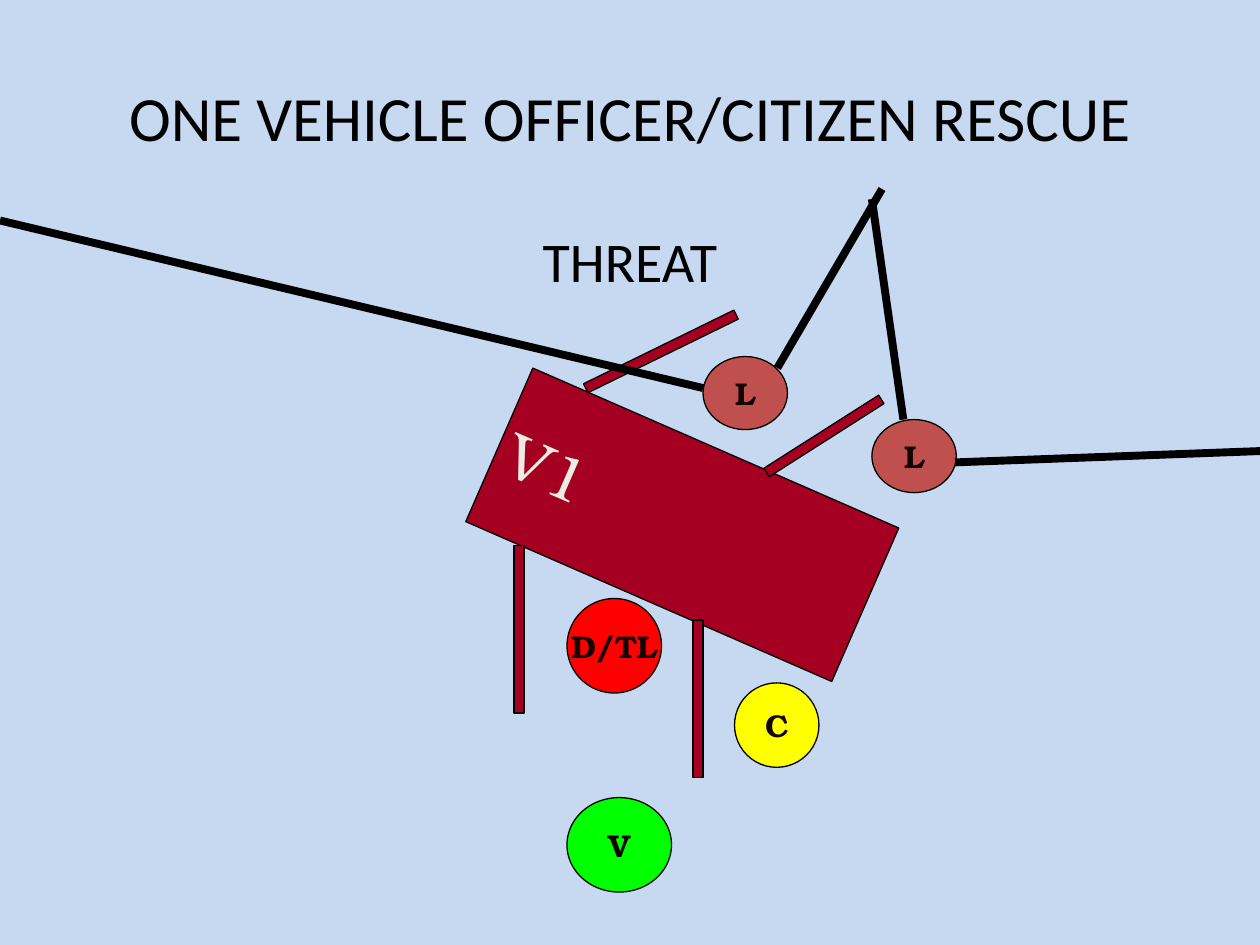
from dataclasses import dataclass

import lxml.etree
import pptx
import pptx.dml.color
import pptx.enum.shapes
import pptx.enum.text
import pptx.oxml.ns
import pptx.util
from pptx.util import Inches

SHAPE = pptx.enum.shapes.MSO_SHAPE
ANCHOR = pptx.enum.text.MSO_ANCHOR
ALIGN = pptx.enum.text.PP_ALIGN


@dataclass(frozen=True)
class Theme:
    background: str = "C6D9F1"
    ink: str = "000000"
    vehicle: str = "A50021"
    vehicle_text: str = "EEECE1"
    role_text: str = "140400"
    lead: str = "C0504D"
    driver: str = "FF0000"
    cover: str = "FFFF00"
    victim: str = "00FF00"
    body_font: str = "Calibri"
    label_font: str = "TeX Gyre Bonum"
    title_size: int = 36
    threat_size: int = 32
    role_size: int = 18
    outline: float = 0.75
    sight_line: float = 4.5


THEME = Theme()


def rgb(value):
    return pptx.dml.color.RGBColor.from_string(value)


def write(tf, text, *, size, color=THEME.ink, font=THEME.body_font, bold=False,
          anchor=ANCHOR.MIDDLE, wrap=True):
    tf.word_wrap = wrap
    tf.vertical_anchor = anchor
    p = tf.paragraphs[0]
    p.alignment = ALIGN.CENTER
    r = p.add_run()
    r.text = text
    r.font.name = font
    r.font.size = pptx.util.Pt(size)
    r.font.bold = bold
    r.font.color.rgb = rgb(color)


def place(sp, box):
    sp.left, sp.top, sp.width, sp.height = box


def within(box, x, y, w, h):
    return box[0] + Inches(x), box[1] + Inches(y), Inches(w), Inches(h)


def add_solid(s, kind, box, fill, rotation=0):
    sp = s.shapes.add_shape(kind, *box)
    sp.shadow.inherit = False
    sp.rotation = rotation
    sp.fill.solid()
    sp.fill.fore_color.rgb = rgb(fill)
    sp.line.color.rgb = rgb(THEME.ink)
    sp.line.width = pptx.util.Pt(THEME.outline)
    return sp


def add_title(s, box):
    sp = s.shapes.title
    place(sp, box)
    write(sp.text_frame, "ONE VEHICLE OFFICER/CITIZEN RESCUE", size=THEME.title_size)


def add_threat(s, box):
    sp = s.shapes.add_textbox(*box)
    write(sp.text_frame, "THREAT", size=THEME.threat_size, anchor=ANCHOR.TOP)


def add_vehicle(s, box):
    body = add_solid(s, SHAPE.RECTANGLE, within(box, 0.67, 0, 1.33, 3.17),
                     THEME.vehicle, 293.6)
    write(body.text_frame, "V1", size=THEME.title_size, color=THEME.vehicle_text,
          font=THEME.label_font, wrap=False)
    body.element.find(".//" + pptx.oxml.ns.qn("a:bodyPr")).set("vert", "eaVert")
    doors = [
        (0.5, 0.17, 1.33, 0.08, 333.9),
        (0, 1.75, 0.08, 1.33, 0),
        (1.92, 0.84, 1.08, 0.08, 327.5),
        (1.42, 2.34, 0.08, 1.25, 0),
    ]
    for x, y, w, h, rotation in doors:
        add_solid(s, SHAPE.RECTANGLE, within(box, x, y, w, h), THEME.vehicle, rotation)


def add_team(s, box):
    roles = [
        ("L", 1.08, 0, 0.67, 0.58, THEME.lead),
        ("L", 2.42, 0.5, 0.67, 0.58, THEME.lead),
        ("D/TL", 0, 1.92, 0.75, 0.75, THEME.driver),
        ("C", 1.33, 2.59, 0.67, 0.67, THEME.cover),
        ("V", 0, 3.5, 0.83, 0.75, THEME.victim),
    ]
    for label, x, y, w, h, fill in roles:
        sp = add_solid(s, SHAPE.OVAL, within(box, x, y, w, h), fill)
        write(sp.text_frame, label, size=THEME.role_size, color=THEME.role_text,
              font=THEME.label_font, bold=True, wrap=False)


def add_sight_lines(s, box):
    lines = [
        (5.58, 1.58, 0, 0.25),
        (6.17, 1.42, 7, 0),
        (7.17, 1.83, 6.92, 0.08),
        (7.58, 2.17, 10, 2.08),
    ]
    left, top = box[:2]
    for x1, y1, x2, y2 in lines:
        line = s.shapes.add_connector(
            pptx.enum.shapes.MSO_CONNECTOR.STRAIGHT,
            left + Inches(x1), top + Inches(y1), left + Inches(x2), top + Inches(y2))
        line.line.color.rgb = rgb(THEME.ink)
        line.line.width = pptx.util.Pt(THEME.sight_line)
        sp_pr = line.element.find(pptx.oxml.ns.qn("p:spPr"))
        lxml.etree.SubElement(sp_pr, pptx.oxml.ns.qn("a:effectLst"))


def build_rescue_slide(prs):
    s = prs.slides.add_slide(prs.slide_layouts[5])
    s.background.fill.solid()
    s.background.fill.fore_color.rgb = rgb(THEME.background)
    regions = [
        (add_title, (0.5, 0.3, 9, 1.25)),
        (add_threat, (0.5, 1.75, 9, 4.95)),
        (add_vehicle, (4.08, 2.58, 3, 3.59)),
        (add_team, (4.5, 2.83, 3.09, 4.25)),
        (add_sight_lines, (0, 1.5, 10, 2.17)),
    ]
    for add_region, box in regions:
        add_region(s, tuple(Inches(v) for v in box))


def main():
    prs = pptx.Presentation()
    prs.slide_width, prs.slide_height = Inches(10), Inches(7.5)
    build_rescue_slide(prs)
    prs.save("out.pptx")


if __name__ == "__main__":
    main()
